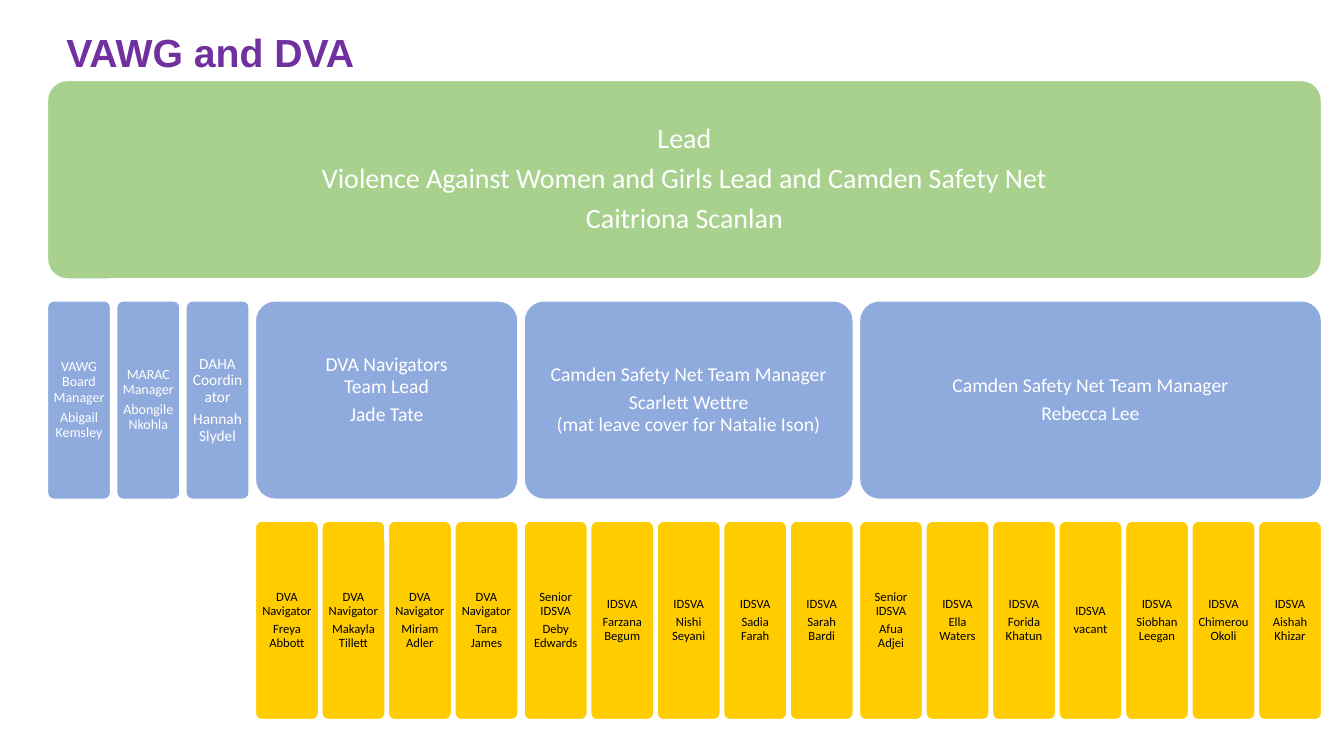
from pptx import Presentation
from pptx import util as u
from pptx.dml.color import RGBColor
from pptx.enum import shapes, text

LEFT, TOP = 33.9, 57.5
BOX_WIDTH, BOX_HEIGHT, ROW_PITCH = 45.1, 141.8, 157.4
STAFF_GAP, GAP = 2.4, 4.4
GREEN, BLUE, YELLOW = "A9D18E", "8FAADC", "FFCC00"
WHITE, BLACK, PURPLE = "FFFFFF", "000000", "7030A0"

LEAD = "Lead\nViolence Against Women and Girls Lead and Camden Safety Net\nCaitriona Scanlan"
MANAGERS = [
    ("VAWG Board Manager\nAbigail Kemsley", 10),
    ("MARAC Manager\nAbongile Nkohla", 10),
    ("DAHA Coordinator\nHannah Slydel", 11),
]
TEAMS = [
    ("DVA Navigators\vTeam Lead\nJade Tate", 14, [
        "DVA Navigator\nFreya Abbott", "DVA Navigator\nMakayla Tillett",
        "DVA Navigator\nMiriam Adler", "DVA Navigator\nTara James"]),
    ("Camden Safety Net Team Manager\nScarlett Wettre\v(mat leave cover for Natalie Ison)", 0, [
        "Senior IDSVA\nDeby Edwards", "IDSVA\nFarzana Begum", "IDSVA\nNishi Seyani",
        "IDSVA\nSadia Farah", "IDSVA\nSarah Bardi"]),
    ("Camden Safety Net Team Manager\nRebecca Lee", 0, [
        "Senior IDSVA\nAfua Adjei", "IDSVA\nElla Waters", "IDSVA\nForida Khatun",
        "IDSVA\nvacant", "IDSVA\nSiobhan Leegan", "IDSVA\nChimerou Okoli",
        "IDSVA\nAishah Khizar"]),
]


def color(value):
    return RGBColor.from_string(value)


class OrgChart:
    """Draws the titled organisation chart on one slide."""

    def __init__(self, slide):
        self.slide = slide
        self.body_font = "Calibri"
        self.title_font = "Arial"

    def style(self, paragraph, name, size, ink):
        paragraph.line_spacing = 0.9
        paragraph.font.name = name
        paragraph.font.size = u.Pt(size)
        paragraph.font.color.rgb = color(ink)

    def title(self, words):
        box = self.slide.shapes.add_textbox(u.Pt(40.3), u.Pt(14.4), u.Pt(828), u.Pt(43.2))
        frame = box.text_frame
        frame.word_wrap = True
        frame.vertical_anchor = text.MSO_ANCHOR.BOTTOM
        frame.text = words
        paragraph = frame.paragraphs[0]
        self.style(paragraph, self.title_font, 28, PURPLE)
        paragraph.font.bold = True

    def box(self, words, left, row, width, size, fill, ink=WHITE, lift=0):
        shape = self.slide.shapes.add_shape(
            shapes.MSO_SHAPE.ROUNDED_RECTANGLE,
            u.Pt(left), u.Pt(TOP + row * ROW_PITCH), u.Pt(width), u.Pt(BOX_HEIGHT))
        shape.adjustments[0] = 0.1
        shape.shadow.inherit = False
        shape.fill.solid()
        shape.fill.fore_color.rgb = color(fill)
        shape.line.color.rgb = color(WHITE)
        shape.line.width = u.Pt(1)
        frame = shape.text_frame
        frame.word_wrap = True
        frame.vertical_anchor = text.MSO_ANCHOR.MIDDLE
        margin = 0.3 * size
        frame.margin_left = frame.margin_right = frame.margin_top = u.Pt(margin)
        frame.margin_bottom = u.Pt(margin + lift)
        frame.text = words
        for paragraph in frame.paragraphs:
            self.style(paragraph, self.body_font, size, ink)
            paragraph.alignment = text.PP_ALIGN.CENTER
            paragraph.space_after = u.Pt(0.35 * size)


def main():
    presentation = Presentation()
    presentation.slide_width = u.Pt(960)
    presentation.slide_height = u.Pt(540)
    chart = OrgChart(presentation.slides.add_slide(presentation.slide_layouts[6]))

    left = LEFT
    for words, size in MANAGERS:
        chart.box(words, left, 1, BOX_WIDTH, size, BLUE)
        left += BOX_WIDTH + GAP
    pitch = BOX_WIDTH + STAFF_GAP
    for words, lift, staff in TEAMS:
        width = len(staff) * pitch - STAFF_GAP
        chart.box(words, left, 1, width, 14, BLUE, lift=lift)
        for index, member in enumerate(staff):
            chart.box(member, left + index * pitch, 2, BOX_WIDTH, 9, YELLOW, BLACK)
        left += width + GAP
    chart.box(LEAD, LEFT, 0, left - GAP - LEFT, 20, GREEN)
    chart.title("VAWG and DVA")

    presentation.save("out.pptx")


if __name__ == "__main__":
    main()
